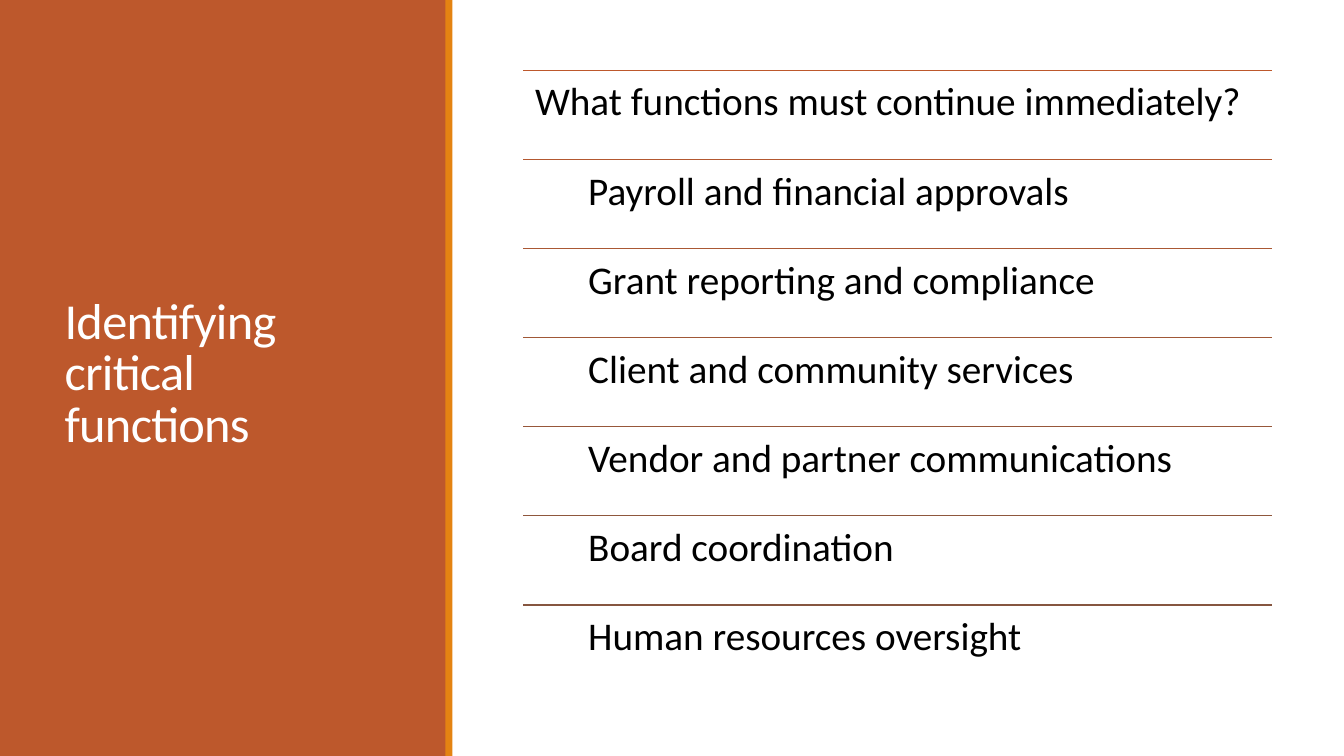
from lxml import etree
from pptx import Presentation
from pptx.dml.color import RGBColor
from pptx.enum.shapes import MSO_CONNECTOR, MSO_SHAPE
from pptx.enum.text import MSO_ANCHOR, MSO_AUTO_SIZE, PP_ALIGN
from pptx.oxml.ns import qn
from pptx.util import Pt

RECT = MSO_SHAPE.RECTANGLE
LINE = MSO_CONNECTOR.STRAIGHT
TOP, MIDDLE = MSO_ANCHOR.TOP, MSO_ANCHOR.MIDDLE
LEFT = PP_ALIGN.LEFT
FIXED = MSO_AUTO_SIZE.NONE

RUST = RGBColor(0xBD, 0x58, 0x2C)
AMBER = RGBColor(0xE4, 0x83, 0x12)
WHITE = RGBColor(0xFF, 0xFF, 0xFF)
BLACK = RGBColor(0x00, 0x00, 0x00)
RULES = [
    RUST,
    RGBColor(0xB3, 0x58, 0x30),
    RGBColor(0xAA, 0x58, 0x34),
    RGBColor(0xA0, 0x58, 0x37),
    RGBColor(0x97, 0x57, 0x3A),
    RGBColor(0x8F, 0x57, 0x3D),
    RGBColor(0x86, 0x56, 0x40),
]

ITEMS = [
    "What functions must continue immediately?",
    "Payroll and financial approvals",
    "Grant reporting and compliance",
    "Client and community services",
    "Vendor and partner communications",
    "Board coordination",
    "Human resources oversight",
]
LIST_X, LIST_Y, LIST_W, ROW_H = 373.8, 50.3, 535, 63.6
PAD, INDENT = 8.4, 38


class Canvas:
    font = "Calibri"

    def __init__(self, slide):
        self.slide = slide
        self.shapes = slide.shapes

    def panel(self, x, y, w, h, color):
        box = self.shapes.add_shape(RECT, Pt(x), Pt(y), Pt(w), Pt(h))
        box.shadow.inherit = False
        box.fill.solid()
        box.fill.fore_color.rgb = color
        box.line.fill.background()

    def label(self, frame, text, size, color, spacing, anchor):
        frame.word_wrap = True
        frame.auto_size = FIXED
        frame.vertical_anchor = anchor
        para = frame.paragraphs[0]
        para.alignment = LEFT
        para.line_spacing = spacing
        run = para.add_run()
        run.text = text
        run.font.name = self.font
        run.font.size = Pt(size)
        run.font.color.rgb = color
        return run

    def title(self, x, y, w, h, text):
        box = self.shapes.title
        box.left, box.top, box.width, box.height = Pt(x), Pt(y), Pt(w), Pt(h)
        run = self.label(box.text_frame, text, 36, WHITE, 0.85, MIDDLE)
        run._r.get_or_add_rPr().set("spc", "-50")
        self.shapes._spTree.append(box._element)

    def rule(self, x, y, w, color):
        line = self.shapes.add_connector(LINE, Pt(x), Pt(y), Pt(x + w), Pt(y))
        line.line.color.rgb = color
        line.line.width = Pt(1.25)
        etree.SubElement(line._element.spPr, qn("a:effectLst"))

    def entry(self, x, y, w, h, text, indent):
        frame = self.shapes.add_textbox(Pt(x), Pt(y), Pt(w), Pt(h)).text_frame
        frame.margin_left = Pt(PAD + indent)
        frame.margin_top = frame.margin_right = frame.margin_bottom = Pt(PAD)
        self.label(frame, text, 28, BLACK, 0.9, TOP)


def main():
    deck = Presentation()
    deck.slide_width, deck.slide_height = Pt(960), Pt(540)
    page = Canvas(deck.slides.add_slide(deck.slide_layouts[5]))
    page.panel(0, 0, 319, 540, RUST)
    page.title(38.9, 41, 242.6, 454.3, "Identifying critical functions")
    page.panel(318.2, 0, 5, 540, AMBER)
    for row, (text, color) in enumerate(zip(ITEMS, RULES)):
        y = LIST_Y + row * ROW_H
        page.rule(LIST_X, y, LIST_W, color)
        page.entry(LIST_X, y, LIST_W, ROW_H, text, INDENT if row else 0)
    deck.save("out.pptx")


if __name__ == "__main__":
    main()
